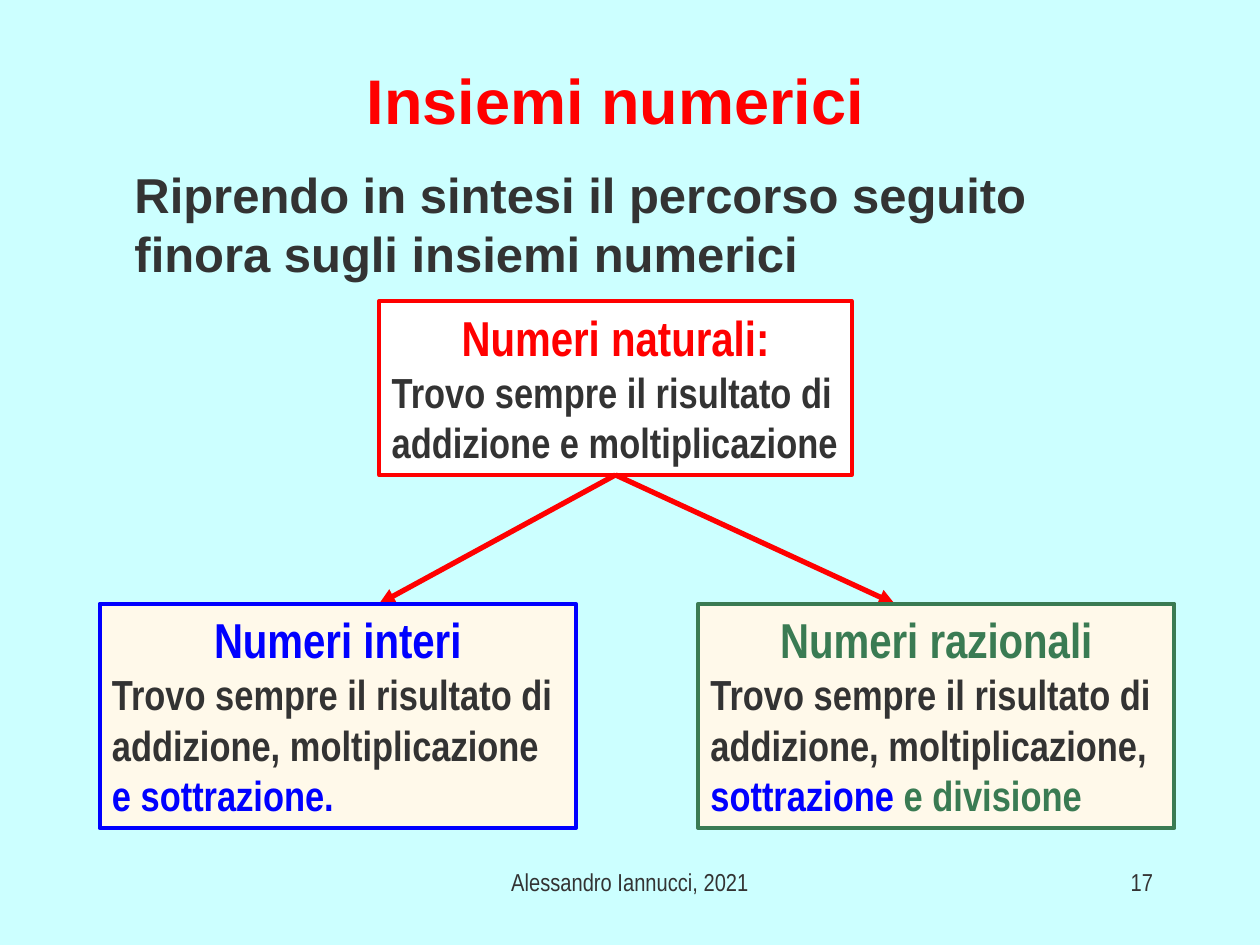
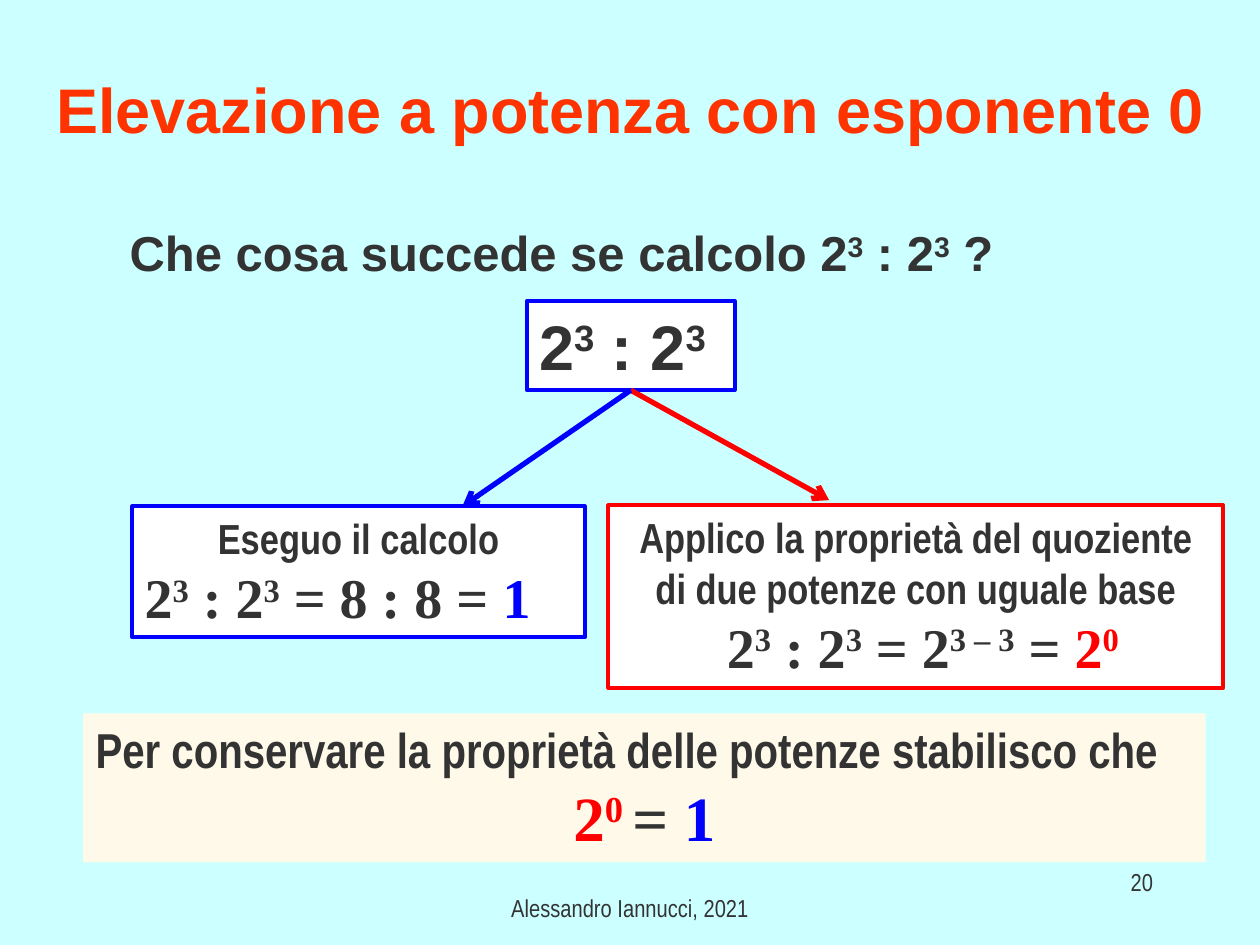
from lxml import etree
from pptx import Presentation
from pptx.dml.color import RGBColor
from pptx.enum.shapes import MSO_CONNECTOR as Link, MSO_SHAPE as Preset
from pptx.enum.text import MSO_ANCHOR as Anchor, MSO_AUTO_SIZE as Fit, PP_ALIGN as Align
from pptx.oxml.ns import qn
from pptx.util import Pt

SKY, CREAM, WHITE = "CCFFFF", "FFF9EA", "FFFFFF"
INK, RED, ORANGE, BLUE, GREEN = "333333", "FF0000", "FF3300", "0000FF", "3A7B53"
SANS, NARROW, SERIF = "Arial", "Arial Narrow", "Times New Roman"
AUTHOR = "Alessandro Iannucci, 2021"
BOTTOM = 2


def color(hex_value):
    return RGBColor.from_string(hex_value)


def piece(text, **changes):
    """A stretch of text; parts between carets are superscript."""
    return text, changes


def line(*pieces, align=Align.LEFT, **style):
    """A paragraph whose pieces share a style and may change it."""
    return pieces, align, style


def write(paragraph, text, size=24, font=NARROW, ink=INK, bold=True):
    for index, part in enumerate(text.split("^")):
        if not part:
            continue
        run = paragraph.add_run()
        run.text = part
        run.font.size, run.font.name, run.font.bold = Pt(size), font, bold
        run.font.color.rgb = color(ink)
        if index % 2:
            run.font._element.set("baseline", "30000")


def heading(text, size=28, ink=INK):
    return line(piece(text), align=Align.CENTER, size=size, ink=ink)


class Lesson:
    def __init__(self):
        self.deck = Presentation()
        self.deck.slide_width, self.deck.slide_height = Pt(720), Pt(540)
        background = self.deck.slide_master.background.fill
        background.solid()
        background.fore_color.rgb = color(SKY)
        self.slide = None

    def fill_text(self, frame, lines, anchor=Anchor.TOP, fit=Fit.NONE):
        frame.word_wrap = True
        frame.auto_size = fit
        frame.vertical_anchor = anchor
        for index, (pieces, align, style) in enumerate(lines):
            paragraph = frame.add_paragraph() if index else frame.paragraphs[0]
            paragraph.alignment = align
            for text, changes in pieces:
                write(paragraph, text, **{**style, **changes})

    def start(self, title, place, ink, number, author_top):
        self.slide = self.deck.slides.add_slide(self.deck.slide_layouts[5])
        holder = self.slide.shapes.title
        holder.left, holder.top, holder.width, holder.height = map(Pt, place)
        self.fill_text(holder.text_frame,
                       [line(piece(title), align=Align.CENTER, size=36, font=SANS, ink=ink)],
                       anchor=Anchor.MIDDLE)
        small = dict(size=14, bold=False)
        self.text((246, author_top, 228, 36), line(piece(AUTHOR), align=Align.CENTER, **small))
        self.text((516, 492, 150, 36), line(piece(number), align=Align.RIGHT, **small))

    def text(self, place, *lines):
        box = self.slide.shapes.add_textbox(*map(Pt, place))
        self.fill_text(box.text_frame, lines)

    def panel(self, place, fill, border, *lines):
        shape = self.slide.shapes.add_shape(Preset.RECTANGLE, *map(Pt, place))
        shape.shadow.inherit = False
        shape.fill.solid()
        shape.fill.fore_color.rgb = color(fill)
        if border:
            shape.line.color.rgb = color(border)
            shape.line.width = Pt(2.25)
        else:
            shape.line.fill.background()
        self.fill_text(shape.text_frame, lines, fit=Fit.SHAPE_TO_FIT_TEXT)
        return shape

    def arrow(self, source, end, ink, head):
        """Arrow from the middle of the source's lower side to a point."""
        arrow = self.slide.shapes.add_connector(Link.STRAIGHT, 0, 0, *map(Pt, end))
        arrow.begin_connect(source, BOTTOM)
        arrow.line.color.rgb = color(ink)
        arrow.line.width = Pt(3)
        etree.SubElement(arrow.line._get_or_add_ln(), qn("a:tailEnd"), type=head)
        etree.SubElement(arrow._element.spPr, qn("a:effectLst"))


def number_sets(lesson):
    lesson.start("Insiemi numerici", (112.3, 23, 478.8, 67), RED, "17", 492)
    lesson.text((69.8, 90.7, 581, 75),
                line(piece("Riprendo in sintesi il percorso seguito finora sugli insiemi numerici"),
                     size=28, font=SANS))
    naturals = lesson.panel(
        (216.7, 172, 270, 99.4), WHITE, RED, heading("Numeri naturali:", ink=RED),
        line(piece("Trovo sempre il risultato di addizione e moltiplicazione")))
    for end_x in (216.7, 511.2):
        lesson.arrow(naturals, (end_x, 345), RED, "triangle")

    always = "Trovo sempre il risultato di addizione, moltiplicazione"
    branches = [
        (56.9, "Numeri interi", BLUE,
         [piece(always + " "), piece("e sottrazione.", ink=BLUE)]),
        (398.9, "Numeri razionali", GREEN,
         [piece(always + ", "), piece("sottrazione ", ink=BLUE), piece("e divisione", ink=GREEN)]),
    ]
    for left, name, ink, results in branches:
        lesson.panel((left, 345, 272.2, 128.2), CREAM, ink, heading(name, ink=ink), line(*results))


def zero_exponent(lesson):
    lesson.start("Elevazione a potenza con esponente 0", (15.8, 27.4, 689, 69), ORANGE, "20", 507)
    quotient = "2^3^ : 2^3^"
    lesson.text((67, 123.8, 596, 41),
                line(piece(f"Che cosa succede se calcolo {quotient} ?"), size=28, font=SANS))
    start = lesson.panel((301, 172, 118.8, 51), WHITE, BLUE,
                         line(piece(quotient), size=36, font=SANS))
    lesson.arrow(start, (473.8, 285.8), RED, "arrow")
    lesson.arrow(start, (264.2, 289.4), BLUE, "arrow")

    formula = dict(size=32, font=SERIF)
    lesson.panel((75.6, 289.4, 258.5, 74.9), WHITE, BLUE, heading("Eseguo il calcolo", 24),
                 line(piece(f"{quotient} = 8 : 8 = "), piece("1", ink=BLUE), **formula))
    lesson.panel((347.6, 288.8, 351.4, 104.4), WHITE, RED,
                 heading("Applico la proprietà del quoziente di due potenze con uguale base", 24),
                 line(piece(f" {quotient} = 2^3 – 3^ = "), piece("2^0^", ink=RED),
                      align=Align.CENTER, **formula))
    lesson.panel((47.5, 407.6, 641.5, 85), CREAM, None,
                 line(piece("Per conservare la proprietà delle potenze stabilisco che"), size=28),
                 line(piece("2^0 ^", ink=RED), piece("= "), piece("1", ink=BLUE),
                      align=Align.CENTER, size=36, font=SERIF))


def main():
    lesson = Lesson()
    number_sets(lesson)
    zero_exponent(lesson)
    lesson.deck.save("out.pptx")


if __name__ == "__main__":
    main()
